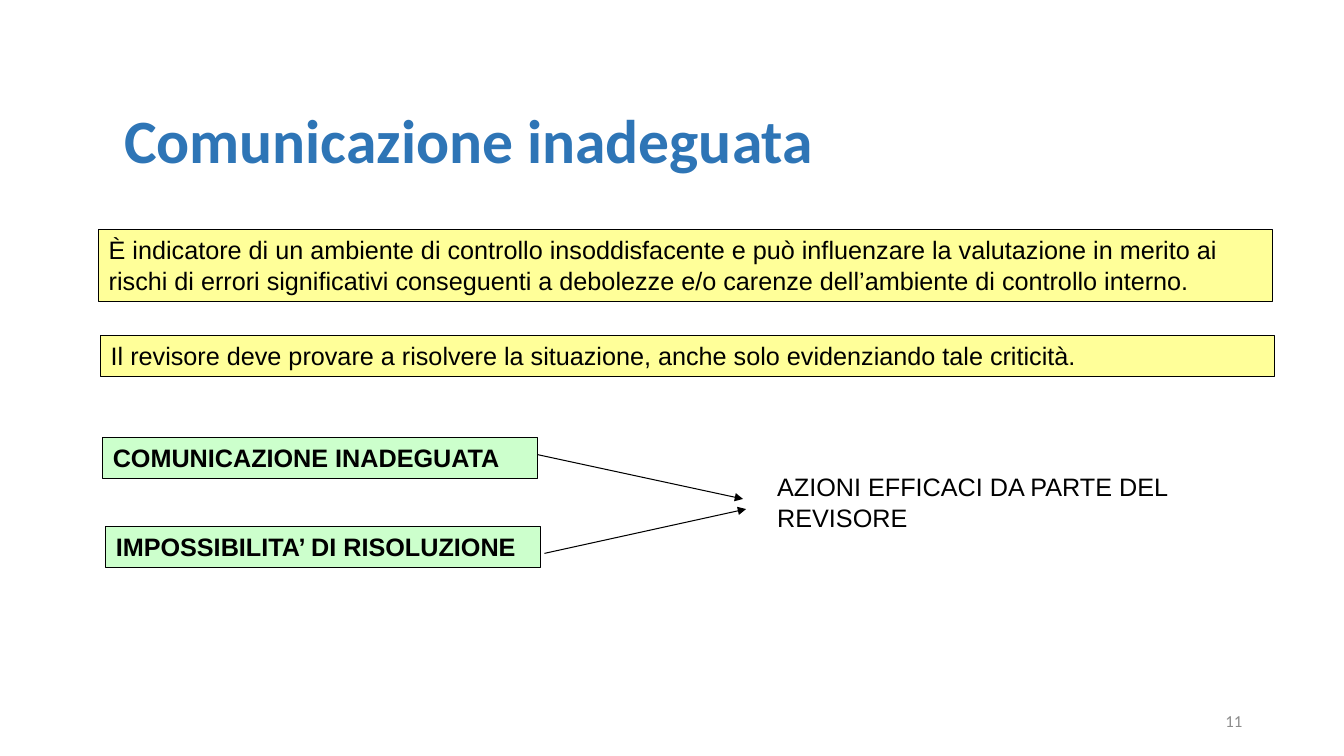
"""Build the slide on inadequate communication with the auditor."""
import pptx
import pptx.dml.color
import pptx.enum.shapes
import pptx.enum.text
import pptx.oxml
import pptx.oxml.ns
import pptx.util
from pptx.util import Inches

BLACK, BLUE, GREY = "000000", "2E75B6", "8C8C8C"
YELLOW, GREEN = "FFFF99", "CCFFCC"
ANCHOR = pptx.enum.text.MSO_ANCHOR
ALIGN = pptx.enum.text.PP_ALIGN


def color(value):
    """Turn a hex string into a colour."""
    return pptx.dml.color.RGBColor.from_string(value)


def write(shape, text, size=18, name="Arial", ink=BLACK, bold=False,
          align=ALIGN.LEFT, anchor=ANCHOR.TOP):
    """Put one formatted paragraph in a shape."""
    frame = shape.text_frame
    frame.word_wrap = True
    frame.auto_size = pptx.enum.text.MSO_AUTO_SIZE.NONE
    frame.vertical_anchor = anchor
    frame.text = text
    para = frame.paragraphs[0]
    para.alignment = align
    for span in para.runs:
        span.font.size = pptx.util.Pt(size)
        span.font.name = name
        span.font.bold = bold
        span.font.color.rgb = color(ink)
    return para


def add_title(page, left, top, width, height):
    """Place and format the title placeholder."""
    title = page.shapes.title
    title.left, title.top = Inches(left), Inches(top)
    title.width, title.height = Inches(width), Inches(height)
    para = write(title, "Comunicazione inadeguata", 44, "Calibri", BLUE, True,
                 anchor=ANCHOR.MIDDLE)
    para.line_spacing = 0.9


def add_panel(page, text, left, top, width, height, fill, bold=False):
    """Add a filled and outlined text panel."""
    panel = page.shapes.add_shape(
        pptx.enum.shapes.MSO_SHAPE.RECTANGLE,
        Inches(left), Inches(top), Inches(width), Inches(height))
    panel.shadow.inherit = False
    panel.fill.solid()
    panel.fill.fore_color.rgb = color(fill)
    panel.line.color.rgb = color(BLACK)
    panel.line.width = pptx.util.Pt(0.75)
    write(panel, text, bold=bold)


def add_label(page, text, left, top, width, height, **style):
    """Add a plain text box."""
    box = page.shapes.add_textbox(
        Inches(left), Inches(top), Inches(width), Inches(height))
    write(box, text, **style)


def add_arrow(page, start, end):
    """Add a thin line with a triangular head at its end."""
    arrow = page.shapes.add_connector(
        pptx.enum.shapes.MSO_CONNECTOR.STRAIGHT,
        *(Inches(value) for value in start + end))
    arrow.line.color.rgb = color(BLACK)
    arrow.line.width = pptx.util.Pt(0.75)
    head = pptx.oxml.parse_xml(
        f'<a:tailEnd {pptx.oxml.ns.nsdecls("a")} type="triangle"/>')
    arrow.line._get_or_add_ln().append(head)
    arrow._element.spPr.append(pptx.oxml.parse_xml(
        f'<a:effectLst {pptx.oxml.ns.nsdecls("a")}/>'))


def add_statements(page, left, top, width):
    """Stack the two yellow statements."""
    add_panel(page, "È indicatore di un ambiente di controllo insoddisfacente "
              "e può influenzare la valutazione in merito ai rischi di errori "
              "significativi conseguenti a debolezze e/o carenze "
              "dell’ambiente di controllo interno.",
              left, top, width, 0.71, YELLOW)
    add_panel(page, "Il revisore deve provare a risolvere la situazione, "
              "anche solo evidenziando tale criticità.",
              left + 0.02, top + 1.05, width, 0.41, YELLOW)


def add_consequence(page, left, top, width):
    """Lead from the two green causes to the resulting actions."""
    causes = ["COMUNICAZIONE INADEGUATA", "IMPOSSIBILITA’ DI RISOLUZIONE"]
    for index, cause in enumerate(causes):
        add_panel(page, cause, left + 0.03 * index, top + 0.88 * index,
                  width, 0.41, GREEN, bold=True)
    add_label(page, "AZIONI EFFICACI DA PARTE DEL REVISORE",
              left + 6.59, top + 0.29, 4.78, 0.7)
    edge = left + width
    add_arrow(page, (edge, top + 0.17), (edge + 2.04, top + 0.61))
    add_arrow(page, (edge + 0.07, top + 1.15), (edge + 2.07, top + 0.71))


def main():
    """Create and save the deck."""
    deck = pptx.Presentation()
    deck.slide_width, deck.slide_height = Inches(13.33), Inches(7.5)
    page = deck.slides.add_slide(deck.slide_layouts[5])
    add_title(page, 1.13, 0.7, 11.5, 1.45)
    add_statements(page, 0.98, 2.28, 11.64)
    add_consequence(page, 1.02, 4.34, 4.31)
    add_label(page, "11", 9.42, 6.95, 3, 0.4, size=12, name="Calibri",
              ink=GREY, align=ALIGN.RIGHT, anchor=ANCHOR.MIDDLE)
    deck.save("out.pptx")


if __name__ == "__main__":
    main()
